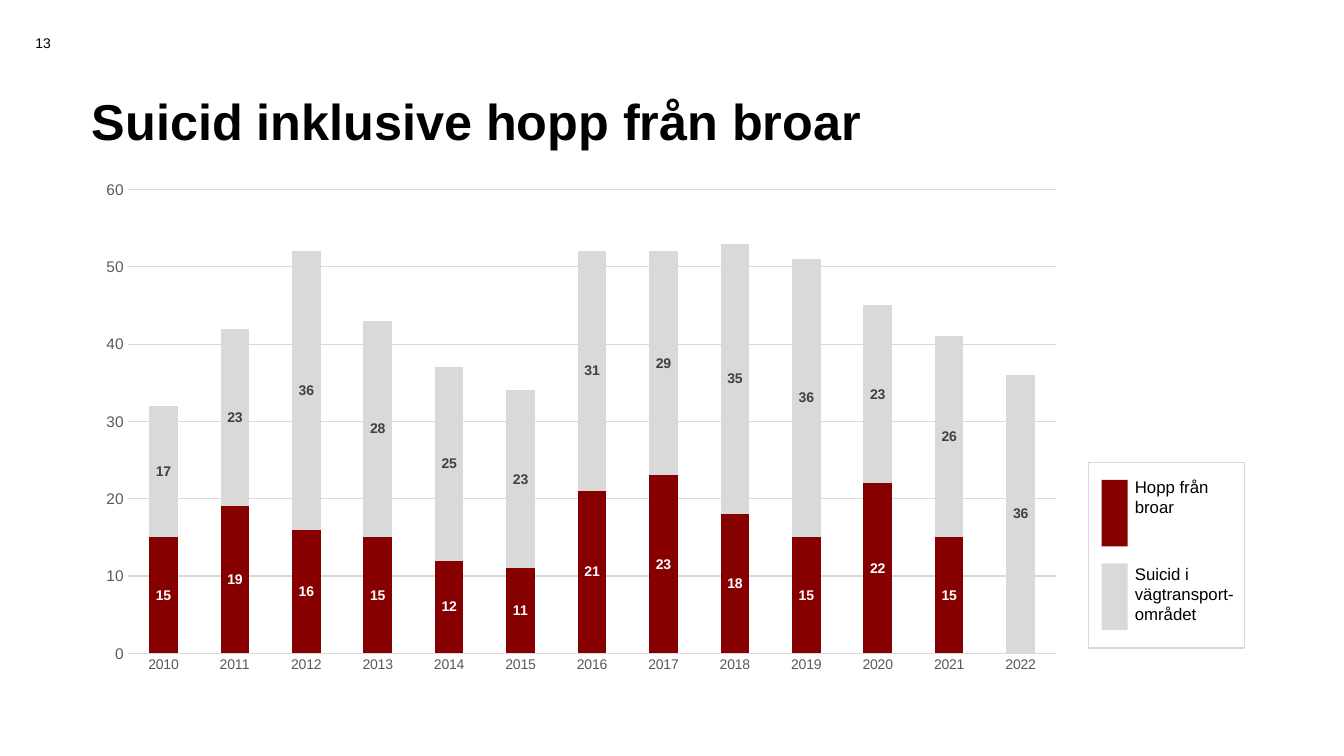
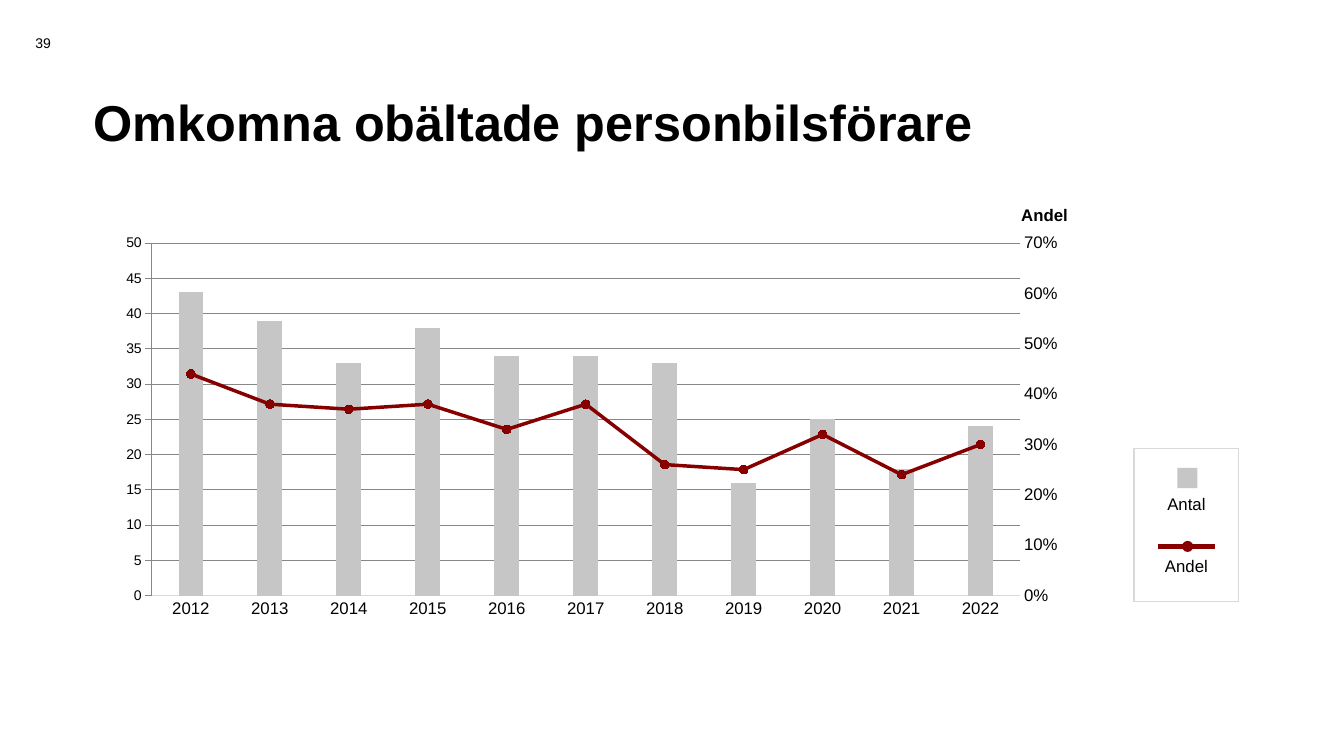
import copy
from dataclasses import dataclass
from typing import Any, NamedTuple, Optional

import lxml.etree
import pptx
import pptx.chart.axis
import pptx.chart.data
import pptx.dml.color
import pptx.enum.chart
import pptx.enum.shapes
import pptx.enum.text
import pptx.oxml
import pptx.oxml.ns
import pptx.util

Cm, Pt = pptx.util.Cm, pptx.util.Pt
qn, nsdecls = pptx.oxml.ns.qn, pptx.oxml.ns.nsdecls
ALIGN = pptx.enum.text.PP_ALIGN
ANCHOR = pptx.enum.text.MSO_ANCHOR
SHAPE = pptx.enum.shapes.MSO_SHAPE
KIND = pptx.enum.chart.XL_CHART_TYPE


@dataclass(frozen=True)
class Theme:
    font: str = "Arial"
    black: str = "000000"
    white: str = "FFFFFF"
    red: str = "870000"
    pale: str = "D9D9D9"
    gray: str = "C6C6C6"
    dark: str = "404040"
    soft: str = "595959"
    head: float = 36
    body: float = 12
    mid: float = 11
    small: float = 10


class Box(NamedTuple):
    """Left, top, width and height in centimetres."""
    x: float
    y: float
    w: float
    h: float

    def cm(self) -> list[int]:
        return [Cm(v) for v in self]


class Data(NamedTuple):
    name: str
    vals: tuple[Optional[float], ...]
    fill: str
    ink: Optional[str] = None


T = Theme()


def rgb(color: str) -> Any:
    return pptx.dml.color.RGBColor.from_string(color)


def style(font: Any, size: float, color: str = T.black, bold: bool = False) -> None:
    font.name, font.size, font.bold = T.font, Pt(size), bold
    font.color.rgb = rgb(color)


def write(frame: Any, *paras: str, size: float = T.body, color: str = T.black,
          bold: bool = False, align: Any = ALIGN.LEFT, anchor: Any = ANCHOR.TOP,
          gaps: tuple[float, ...] = (), lead: Optional[float] = None) -> None:
    """Fill a frame with paragraphs; gaps are the points before each."""
    frame.word_wrap = True
    frame.auto_size = pptx.enum.text.MSO_AUTO_SIZE.NONE
    frame.vertical_anchor = anchor
    for i, text in enumerate(paras):
        para = frame.add_paragraph() if i else frame.paragraphs[0]
        para.text, para.alignment = text, align
        if gaps:
            para.space_before = Pt(gaps[i])
        if lead:
            para.line_spacing = lead
        for run in para.runs:
            style(run.font, size, color, bold)
        # Line breaks need the run format too, or they keep the default height.
        for brk in para._p.findall(qn("a:br")):
            brk.append(copy.deepcopy(para._p.find(qn("a:r")).find(qn("a:rPr"))))


def label(shapes: Any, box: Box, *paras: str, **form: Any) -> None:
    write(shapes.add_textbox(*box.cm()).text_frame, *paras, **form)


def block(shapes: Any, box: Box, fill: str, edge: Optional[str] = None,
          kind: Any = SHAPE.RECTANGLE) -> None:
    shape = shapes.add_shape(kind, *box.cm())
    shape.shadow.inherit = False
    shape.fill.solid()
    shape.fill.fore_color.rgb = rgb(fill)
    if edge:
        shape.line.color.rgb = rgb(edge)
        shape.line.width = Pt(1)
    else:
        shape.line.fill.background()


def rule(shapes: Any, x: float, y: float, end: float) -> None:
    """Draw a level red line."""
    line = shapes.add_connector(pptx.enum.shapes.MSO_CONNECTOR.STRAIGHT,
                                Cm(x), Cm(y), Cm(end), Cm(y))
    line.line.color.rgb = rgb(T.red)
    line.line.width = Pt(3)
    lxml.etree.SubElement(line.element.find(qn("p:spPr")), qn("a:effectLst"))


def start(deck: Any, title: str, page: int, box: Box) -> Any:
    """Add a slide with its title and page number."""
    slide = deck.slides.add_slide(deck.slide_layouts[5])
    head = slide.shapes.title
    head.left, head.top, head.width, head.height = box.cm()
    write(head.text_frame, title, size=T.head, bold=True, anchor=ANCHOR.MIDDLE, lead=0.9)
    label(slide.shapes, Box(0, 0.56, 2.18, 1.02), str(page), size=T.small,
          align=ALIGN.CENTER, anchor=ANCHOR.MIDDLE)
    return slide


def layout(x: float, y: float, size: Optional[tuple[float, float]] = None) -> Any:
    """Make a manual chart layout; a size makes it an inner plot area."""
    parts = [("xMode", "edge"), ("yMode", "edge"), ("x", x), ("y", y)]
    if size:
        parts = [("layoutTarget", "inner"), *parts, ("w", size[0]), ("h", size[1])]
    body = "".join(f'<c:{tag} val="{val}"/>' for tag, val in parts)
    return pptx.oxml.parse_xml(
        f'<c:layout {nsdecls("c")}><c:manualLayout>{body}</c:manualLayout></c:layout>')


def place(host: Any, spot: int, node: Any) -> None:
    """Put a layout in its host in place of any earlier one."""
    for old in host.findall(qn("c:layout")):
        host.remove(old)
    host.insert(spot, node)


def tune(axis: Any, size: float, color: str, line: bool = False, grid: bool = False) -> None:
    """Set tick labels, base line and grid of an axis."""
    none = pptx.enum.chart.XL_TICK_MARK.NONE
    axis.major_tick_mark = axis.minor_tick_mark = none
    style(axis.tick_labels.font, size, color)
    axis.has_major_gridlines = grid
    lines = [axis.format.line] if line else []
    if grid:
        lines.append(axis.major_gridlines.format.line)
    if not line:
        axis.format.line.fill.background()
    for item in lines:
        item.color.rgb = rgb(T.pale)
        item.width = Pt(0.75)


def scale(axis: Any, top: float, step: float, form: str) -> None:
    axis.minimum_scale, axis.maximum_scale, axis.major_unit = 0, top, step
    axis.tick_labels.number_format = form
    axis.tick_labels.number_format_is_linked = False


def name(axis: Any, text: str, x: float, y: float) -> None:
    """Give an axis a level title at a share of the chart."""
    axis.has_title = True
    title = axis.axis_title
    title.text_frame.text = text
    style(title.text_frame.paragraphs[0].runs[0].font, T.body, bold=True)
    body = title.element.find(".//" + qn("a:bodyPr"))
    body.set("rot", "0")
    body.set("vert", "horz")
    place(title.element, 1, layout(x, y))


def plot(slide: Any, box: Box, kind: Any, years: range, rows: list[Data], gap: int) -> Any:
    data = pptx.chart.data.CategoryChartData()
    data.categories = [str(year) for year in years]
    for row in rows:
        data.add_series(row.name, row.vals)
    chart = slide.shapes.add_chart(kind, *box.cm(), data).chart
    chart.has_legend = chart.has_title = False
    style(chart.font, T.small)
    bars = chart.plots[0]
    bars.gap_width, bars.vary_by_categories = gap, False
    for row, item in zip(rows, bars.series):
        item.format.fill.solid()
        item.format.fill.fore_color.rgb = rgb(row.fill)
        if row.ink:
            item.data_labels.show_value = True
            style(item.data_labels.font, T.small, row.ink, True)
    return chart


def split(chart: Any, color: str) -> Any:
    """Turn the second series into a line on a right axis; return that axis."""
    area = chart.element.find(".//" + qn("c:plotArea"))
    bars = area.find(qn("c:barChart"))
    row = bars.findall(qn("c:ser"))[1]
    for tag in ("c:invertIfNegative", "c:spPr"):
        for node in row.findall(qn(tag)):
            row.remove(node)
    line = pptx.oxml.parse_xml(
        f'<c:lineChart {nsdecls("c")}><c:grouping val="standard"/><c:varyColors val="0"/>'
        '<c:marker val="1"/><c:axId val="5001"/><c:axId val="5002"/></c:lineChart>')
    line.insert(2, row)
    bars.addnext(line)

    def axis(tag: str, num: int, cross: int, hide: int, side: str, end: str) -> Any:
        return pptx.oxml.parse_xml(
            f'<c:{tag} {nsdecls("c")}><c:axId val="{num}"/><c:scaling>'
            f'<c:orientation val="minMax"/></c:scaling><c:delete val="{hide}"/>'
            f'<c:axPos val="{side}"/><c:tickLblPos val="nextTo"/>'
            f'<c:crossAx val="{cross}"/><c:crosses val="{end}"/></c:{tag}>')

    right = axis("valAx", 5002, 5001, 0, "r", "max")
    area.find(qn("c:valAx")).addnext(right)
    right.addnext(axis("catAx", 5001, 5002, 1, "b", "autoZero"))

    trend = chart.plots[1].series[0]
    trend.smooth = False
    trend.format.line.color.rgb = rgb(color)
    trend.format.line.width = Pt(2.5)
    trend.marker.style = pptx.enum.chart.XL_MARKER_STYLE.CIRCLE
    trend.marker.size = 6
    trend.marker.format.fill.solid()
    trend.marker.format.fill.fore_color.rgb = rgb(color)
    trend.marker.format.line.color.rgb = rgb(color)
    return pptx.chart.axis.ValueAxis(right)


def bridges(deck: Any) -> None:
    slide = start(deck, "Suicid inklusive hopp från broar", 13, Box(2.06, 1.88, 30, 2.49))
    rows = [
        Data("Hopp från broar", (15, 19, 16, 15, 12, 11, 21, 23, 18, 15, 22, 15, None),
             T.red, T.white),
        Data("Suicid i vägtransportområdet",
             (17, 23, 36, 28, 25, 23, 31, 29, 35, 36, 23, 26, 36), T.pale, T.dark),
    ]
    chart = plot(slide, Box(2.18, 4.29, 24.94, 12.93), KIND.COLUMN_STACKED,
                 range(2010, 2023), rows, 150)
    chart.plots[0].overlap = 100
    tune(chart.category_axis, T.small, T.soft, line=True)
    tune(chart.value_axis, T.mid, T.soft, grid=True)
    scale(chart.value_axis, 60, 10, "0")

    key = slide.shapes.add_group_shape().shapes
    block(key, Box(27.43, 11.66, 3.94, 4.67), T.white, T.pale)
    for i, row in enumerate(rows):
        block(key, Box(27.76, 12.09 + 2.11 * i, 0.66, 1.68), row.fill)
    label(key, Box(28.35, 11.89, 3.53, 3.99), "Hopp från\nbroar",
          "Suicid i\nvägtransport-\nområdet", gaps=(33, 33))


def belts(deck: Any) -> None:
    slide = start(deck, "Omkomna obältade personbilsförare", 39, Box(2.11, 2.46, 30, 1.37))
    rows = [
        Data("Antal", (43, 39, 33, 38, 34, 34, 33, 16, 25, 18, 24), T.gray),
        Data("Andel", (0.44, 0.38, 0.37, 0.38, 0.33, 0.38, 0.26, 0.25, 0.32, 0.24, 0.3),
             T.red),
    ]
    chart = plot(slide, Box(2.39, 4.85, 25.02, 12.27), KIND.COLUMN_CLUSTERED,
                 range(2012, 2023), rows, 219)
    right = split(chart, T.red)
    left = chart.value_axis
    tune(chart.category_axis, T.body, T.black, line=True)
    tune(left, T.body, T.black, grid=True)
    tune(right, T.body, T.black)
    scale(left, 50, 5, "0")
    scale(right, 0.7, 0.1, "0%")
    name(left, "Antal", 0, 0.02)
    name(right, "Andel", 0.93, 0.02)
    place(chart.element.find(".//" + qn("c:plotArea")), 0,
          layout(0.057, 0.104, (0.875, 0.724)))

    key = slide.shapes.add_group_shape().shapes
    block(key, Box(28.58, 11.3, 2.64, 3.86), T.white, T.pale)
    block(key, Box(29.67, 11.79, 0.51, 0.51), T.gray)
    label(key, Box(28.58, 12.32, 2.64, 2.84), *(row.name for row in rows),
          align=ALIGN.CENTER, gaps=(9, 30))
    rule(key, 29.18, 13.77, 30.63)
    block(key, Box(29.79, 13.63, 0.28, 0.28), T.red, kind=SHAPE.OVAL)


def main() -> None:
    deck = pptx.Presentation()
    deck.slide_width, deck.slide_height = Cm(33.87), Cm(19.05)
    bridges(deck)
    belts(deck)
    deck.save("out.pptx")


if __name__ == "__main__":
    main()
